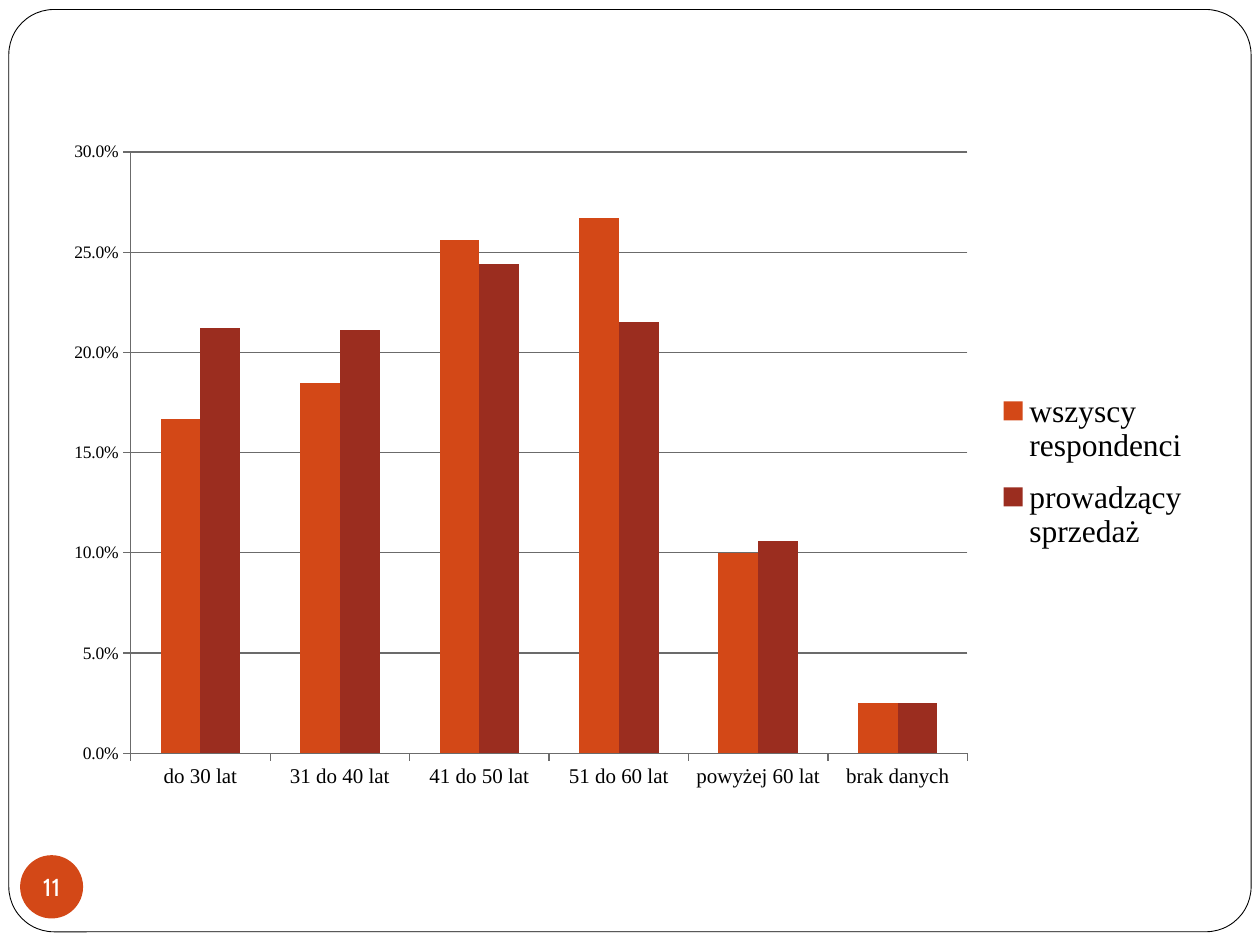
from lxml.etree import SubElement
from pptx import Presentation
from pptx.chart.data import CategoryChartData
from pptx.dml.color import RGBColor
from pptx.enum.chart import XL_CHART_TYPE as ChartType, XL_LEGEND_POSITION as LegendPosition
from pptx.enum.chart import XL_TICK_MARK as TickMark
from pptx.enum.shapes import MSO_SHAPE as Shape
from pptx.enum.text import MSO_ANCHOR as Anchor, PP_ALIGN as Align
from pptx.oxml.ns import qn
from pptx.util import Inches, Pt

WIDTH, HEIGHT = 10, 7.5
COLORS = {"white": "FFFFFF", "black": "000000", "grid": "6B6B6B",
          "orange": "D34817", "red": "9B2D1F"}
CATEGORIES = ["do 30 lat", "31 do 40 lat", "41 do 50 lat", "51 do 60 lat",
              "powyżej 60 lat", "brak danych"]
SERIES = [
    ("wszyscy respondenci", "orange", [0.167, 0.185, 0.256, 0.267, 0.1, 0.025]),
    ("prowadzący sprzedaż", "red", [0.212, 0.211, 0.244, 0.215, 0.106, 0.025]),
]


def color(name):
    return RGBColor.from_string(COLORS[name])


def share(left, top, width, height):
    """Turn shares of the slide's size into lengths."""
    return [Inches(part * size) for part, size in
            zip((left, top, width, height), (WIDTH, HEIGHT) * 2)]


def format_font(font, size, name="Times New Roman", fill="black"):
    font.size, font.name = Pt(size), name
    font.color.rgb = color(fill)


def write(shape, text, align=Align.CENTER, **font_format):
    frame = shape.text_frame
    frame.margin_left = frame.margin_top = frame.margin_right = frame.margin_bottom = 0
    frame.word_wrap = False
    frame.vertical_anchor = Anchor.MIDDLE
    paragraph = frame.paragraphs[0]
    paragraph.alignment = align
    run = paragraph.add_run()
    run.text = text
    format_font(run.font, **font_format)


def place_part(part, index, **settings):
    """Fix a chart part at shares of the chart's size; index is its layout's place."""
    layout = part.find(qn("c:layout"))
    if layout is None:
        layout = SubElement(part, qn("c:layout"))
        part.insert(index, layout)
    manual = SubElement(layout, qn("c:manualLayout"))
    for tag, value in settings.items():
        SubElement(manual, qn(f"c:{tag}")).set("val", str(value))


class SlideBuilder:
    def __init__(self, slide):
        self.slide = slide

    def shape(self, kind, box, fill, line=None, corner=None):
        shape = self.slide.shapes.add_shape(kind, *share(*box))
        shape.shadow.inherit = False
        shape.fill.solid()
        shape.fill.fore_color.rgb = color(fill)
        if line:
            shape.line.color.rgb = color(line)
            shape.line.width = Pt(0.5)
        else:
            shape.line.fill.background()
        if corner is not None:
            shape.adjustments[0] = corner
        return shape

    def axis(self, axis, size):
        axis.major_tick_mark = TickMark.OUTSIDE
        axis.minor_tick_mark = TickMark.NONE
        format_font(axis.tick_labels.font, size)
        axis.format.line.color.rgb = color("grid")
        axis.format.line.width = Pt(0.75)

    def column_chart(self, box, categories, series):
        data = CategoryChartData(number_format="0.0%")
        data.categories = categories
        for name, _, values in series:
            data.add_series(name, values)
        chart = self.slide.shapes.add_chart(
            ChartType.COLUMN_CLUSTERED, *share(*box), data).chart
        format_font(chart.font, 10)
        chart.has_title = False

        plot = chart.plots[0]
        plot.gap_width, plot.overlap = 150, 0
        plot.vary_by_categories = False
        for bars, (_, fill, _) in zip(plot.series, series):
            bars.format.fill.solid()
            bars.format.fill.fore_color.rgb = color(fill)

        self.axis(chart.category_axis, 12)
        value_axis = chart.value_axis
        self.axis(value_axis, 10)
        value_axis.minimum_scale, value_axis.maximum_scale = 0, 0.3
        value_axis.major_unit = 0.05
        value_axis.tick_labels.number_format = "0.0%"
        value_axis.tick_labels.number_format_is_linked = False
        grid_line = value_axis.major_gridlines.format.line
        grid_line.color.rgb = color("grid")
        grid_line.width = Pt(0.75)

        chart.has_legend = True
        legend = chart.legend
        legend.position = LegendPosition.RIGHT
        legend.include_in_layout = False
        format_font(legend.font, 18)
        place_part(plot._element.getparent(), 0, layoutTarget="inner",
                   xMode="edge", yMode="edge", x=0.066, y=0.026, w=0.721, h=0.918)
        place_part(legend._element, 1, xMode="edge", yMode="edge",
                   x=0.8, y=0.37, w=0.19, h=0.29)


def main():
    presentation = Presentation()
    presentation.slide_width, presentation.slide_height = Inches(WIDTH), Inches(HEIGHT)
    blank_layout = presentation.slide_layouts[6]
    builder = SlideBuilder(presentation.slides.add_slide(blank_layout))

    builder.shape(Shape.ROUNDED_RECTANGLE, (0.007, 0.01, 0.986, 0.976),
                  "white", line="black", corner=0.049)
    badge = builder.shape(Shape.OVAL, (0.016, 0.905, 0.05, 0.067), "orange")
    write(badge, "11", size=14, name="Cabin", fill="white")
    builder.column_chart((0.043, 0.143, 0.921, 0.693), CATEGORIES, SERIES)

    presentation.save("out.pptx")


if __name__ == "__main__":
    main()
